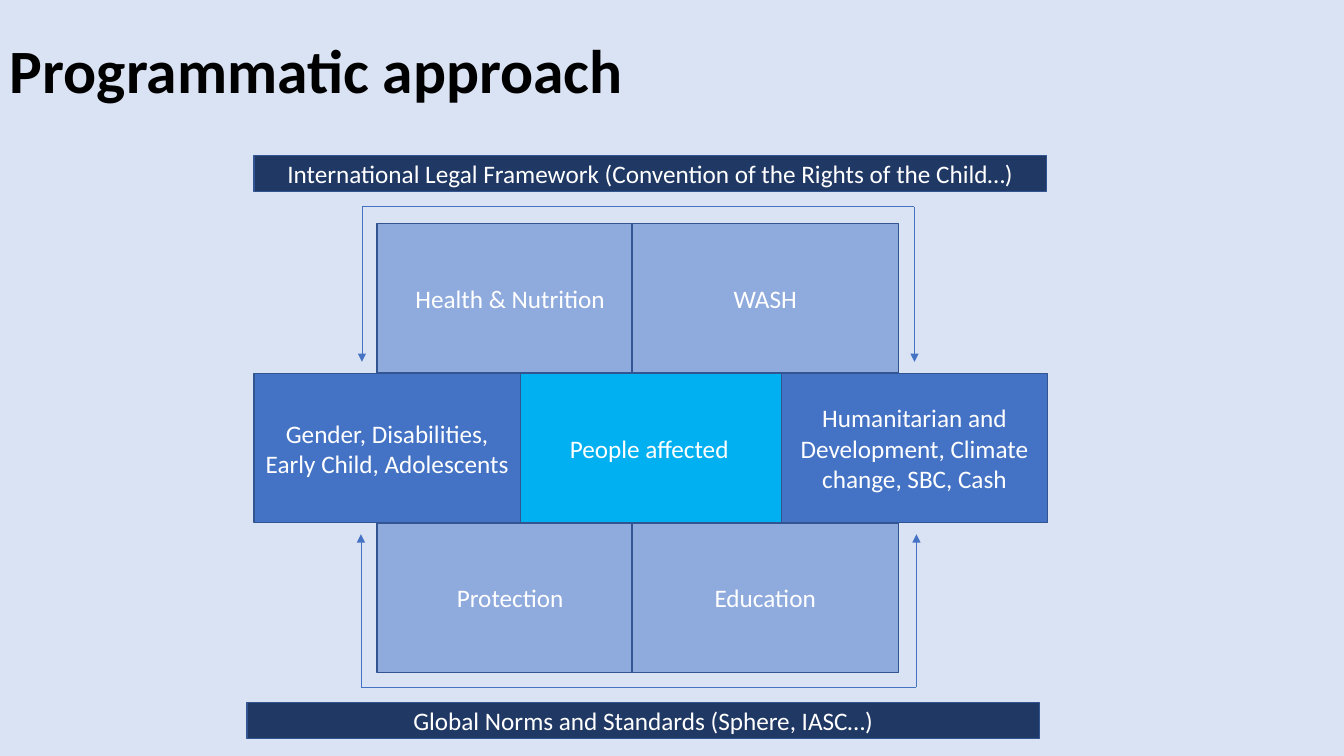
from lxml.etree import SubElement
from pptx import Presentation
from pptx.dml.color import RGBColor
from pptx.enum.shapes import MSO_CONNECTOR, MSO_SHAPE
from pptx.enum.text import MSO_ANCHOR, PP_ALIGN
from pptx.oxml.ns import qn
from pptx.util import Inches, Pt

SLIDE_W, SLIDE_H = 13.33, 7.5
BOX_W, BOX_H = 2.64, 1.48
BAR_W, BAR_H = 7.86, 0.36

# Left edges of the columns and top edges of the three rows
COLS = {"left": 2.52, "inner_left": 3.74, "center": 5.12,
        "inner_right": 6.27, "right": 7.75}
ROWS = [2.22 + i * 1.485 for i in range(3)]

NAVY, BLUE, PALE, CYAN = "203864", "4472C4", "8FAADC", "00B0F0"
OUTLINE, BACKGROUND = "325491", "DAE3F3"

# Back to front: text, column, row, fill
BOXES = [
    ("People affected", "center", 1, CYAN),
    ("Health & Nutrition", "inner_left", 0, PALE),
    ("Protection", "inner_left", 2, PALE),
    ("Education", "inner_right", 2, PALE),
    ("WASH", "inner_right", 0, PALE),
    ("Humanitarian and Development, Climate change, SBC, Cash", "right", 1, BLUE),
    ("Gender, Disabilities, Early Child, Adolescents", "left", 1, BLUE),
]

# Text, left, top
BARS = [
    ("International Legal Framework (Convention of the Rights of the Child…)",
     2.52, 1.54),
    ("Global Norms and Standards (Sphere, IASC…)", 2.45, 6.97),
]

# Left, right, y of the crossbar, y of the arrow tips
BRACKETS = [(3.59, 9.07, 2.05, 3.59), (3.58, 9.09, 6.82, 5.3)]


def color(hex_code):
    return RGBColor.from_string(hex_code)


def write(s, text, size=18, fill="FFFFFF", bold=False,
          align=PP_ALIGN.CENTER, spacing=1.0):
    tf = s.text_frame
    tf.word_wrap = True
    tf.vertical_anchor = MSO_ANCHOR.MIDDLE
    p = tf.paragraphs[0]
    p.alignment = align
    p.line_spacing = spacing
    r = p.add_run()
    r.text = text
    r.font.name = "Calibri"
    r.font.size = Pt(size)
    r.font.bold = bold
    r.font.color.rgb = color(fill)


def add_box(sp, text, x, y, w, h, fill):
    s = sp.add_shape(MSO_SHAPE.RECTANGLE, Inches(x), Inches(y), Inches(w), Inches(h))
    s.shadow.inherit = False
    s.fill.solid()
    s.fill.fore_color.rgb = color(fill)
    s.line.color.rgb = color(OUTLINE)
    s.line.width = Pt(1)
    write(s, text)


def add_line(sp, x1, y1, x2, y2, arrow=False):
    c = sp.add_connector(MSO_CONNECTOR.STRAIGHT,
                         Inches(x1), Inches(y1), Inches(x2), Inches(y2))
    c.line.color.rgb = color(BLUE)
    c.line.width = Pt(0.5)
    if arrow:
        SubElement(c.line._get_or_add_ln(), qn("a:tailEnd"), type="triangle")
    SubElement(c._element.spPr, qn("a:effectLst"))


def add_bracket(sp, left, right, bar_y, tip_y):
    add_line(sp, left, bar_y, right, bar_y)
    for x in (left, right):
        add_line(sp, x, bar_y, x, tip_y, arrow=True)


def main():
    prs = Presentation()
    prs.slide_width, prs.slide_height = Inches(SLIDE_W), Inches(SLIDE_H)
    slide = prs.slides.add_slide(prs.slide_layouts[6])
    slide.background.fill.solid()
    slide.background.fill.fore_color.rgb = color(BACKGROUND)
    sp = slide.shapes

    # Title
    title = sp.add_textbox(0, 0, Inches(11.5), Inches(1.45))
    write(title, "Programmatic approach", size=44, fill="000000", bold=True,
          align=PP_ALIGN.LEFT, spacing=0.9)

    # Sectors around the people affected
    for text, col, row, fill in BOXES:
        add_box(sp, text, COLS[col], ROWS[row], BOX_W, BOX_H, fill)

    # Brackets pointing to the middle row
    for bracket in BRACKETS:
        add_bracket(sp, *bracket)

    # Framework bars above and below
    for text, x, y in BARS:
        add_box(sp, text, x, y, BAR_W, BAR_H, NAVY)

    prs.save("out.pptx")


if __name__ == "__main__":
    main()
